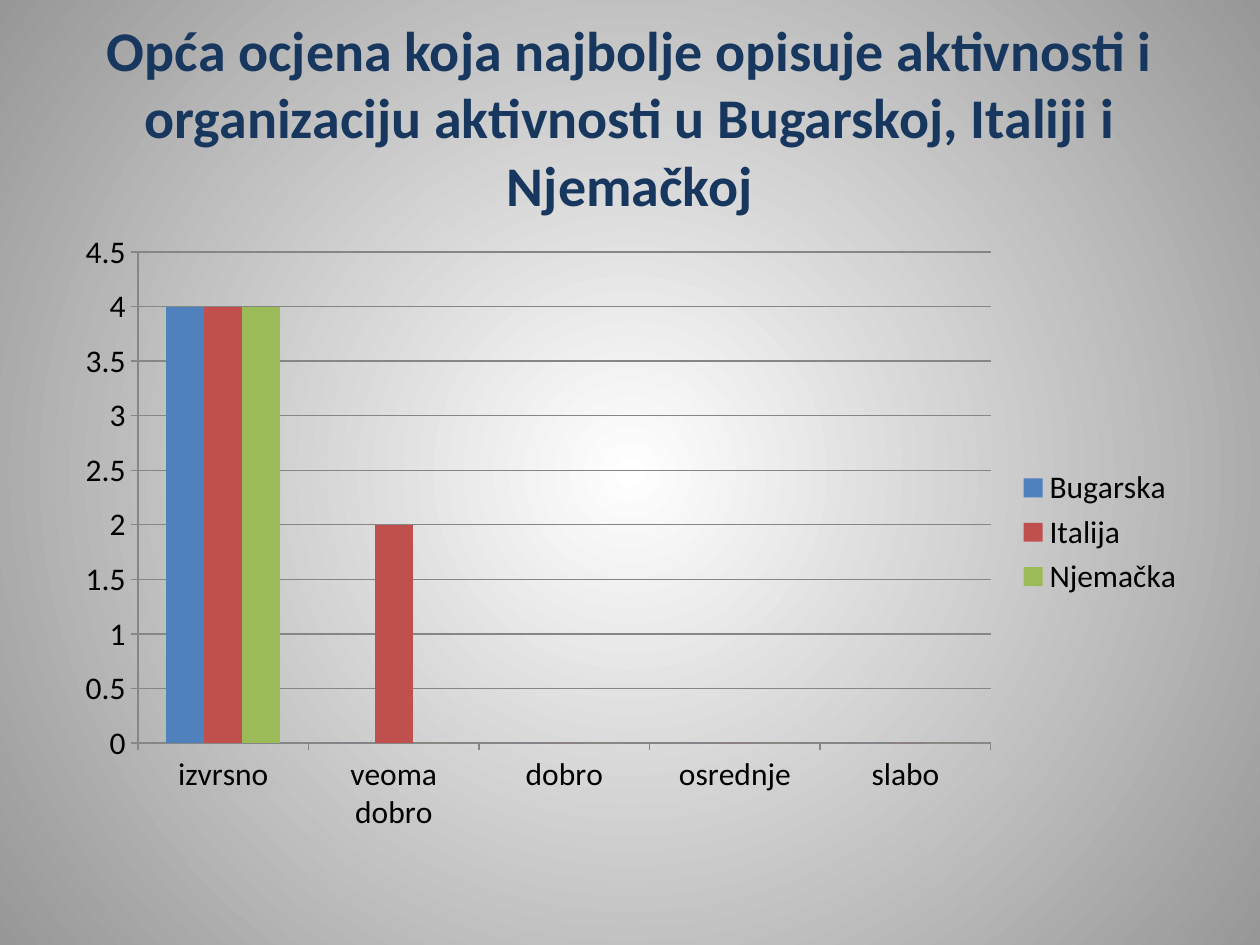
from lxml import etree
from pptx import Presentation
from pptx.chart.data import CategoryChartData
from pptx.dml.color import RGBColor
from pptx.enum.chart import XL_CHART_TYPE, XL_LEGEND_POSITION, XL_TICK_MARK
from pptx.enum.text import MSO_ANCHOR, MSO_AUTO_SIZE, PP_ALIGN
from pptx.oxml.ns import qn
from pptx.util import Pt

PX = 9144  # EMU per px, at 100 px to the inch
FONT = "Calibri"
COLORS = {
    "center": "FFFFFF",
    "edge": "979797",
    "title": "17375E",
    "text": "000000",
    "line": "868686",
    "Bugarska": "4F81BD",
    "Italija": "C0504D",
    "Njemačka": "9BBB59",
}
RATINGS = ["izvrsno", "veoma dobro", "dobro", "osrednje", "slabo"]
VOTES = {
    "Bugarska": [4, 0, 0, 0, 0],
    "Italija": [4, 2, 0, 0, 0],
    "Njemačka": [4, 0, 0, 0, 0],
}


def color(name):
    return RGBColor.from_string(COLORS[name])


presentation = Presentation()
presentation.slide_width = 1000 * PX
presentation.slide_height = 750 * PX
slide = presentation.slides.add_slide(presentation.slide_layouts[5])

# Background: radial gradient from the slide's center
background = slide.background.fill
background.gradient()
for stop, name in zip(background.gradient_stops, ("center", "edge")):
    stop.color.rgb = color(name)
gradient = slide.element.find(".//" + qn("a:gradFill"))
linear = gradient.find(qn("a:lin"))
radial = etree.Element(qn("a:path"), {"path": "circle"})
etree.SubElement(radial, qn("a:fillToRect"), {side: "50000" for side in "ltrb"})
gradient.replace(linear, radial)

# Title
title = slide.shapes.title
title.left, title.top, title.width, title.height = 50 * PX, 30 * PX, 900 * PX, 125 * PX
frame = title.text_frame
frame.text = ("Opća ocjena koja najbolje opisuje aktivnosti i organizaciju "
              "aktivnosti u Bugarskoj, Italiji i Njemačkoj")
frame.word_wrap = True
frame.auto_size = MSO_AUTO_SIZE.NONE
frame.vertical_anchor = MSO_ANCHOR.MIDDLE
paragraph = frame.paragraphs[0]
paragraph.alignment = PP_ALIGN.CENTER
paragraph.font.name = FONT
paragraph.font.size = Pt(32)
paragraph.font.bold = True
paragraph.font.color.rgb = color("title")

# Chart
data = CategoryChartData()
data.categories = RATINGS
for country, votes in VOTES.items():
    data.add_series(country, votes)
chart = slide.shapes.add_chart(
    XL_CHART_TYPE.COLUMN_CLUSTERED, 50 * PX, 175 * PX, 900 * PX, 495 * PX, data
).chart
chart.has_title = False
chart.font.name = FONT
chart.font.size = Pt(18)
chart.font.color.rgb = color("text")

chart.has_legend = True
chart.legend.position = XL_LEGEND_POSITION.RIGHT
chart.legend.include_in_layout = False

chart.value_axis.has_major_gridlines = True
for axis in (chart.category_axis, chart.value_axis):
    axis.major_tick_mark = XL_TICK_MARK.OUTSIDE
    axis.minor_tick_mark = XL_TICK_MARK.NONE
for lines in (chart.category_axis, chart.value_axis, chart.value_axis.major_gridlines):
    lines.format.line.color.rgb = color("line")
    lines.format.line.width = Pt(0.75)

plot = chart.plots[0]
plot.gap_width = 150
plot.vary_by_categories = False
for series in plot.series:
    series.format.fill.solid()
    series.format.fill.fore_color.rgb = color(series.name)

presentation.save("out.pptx")
